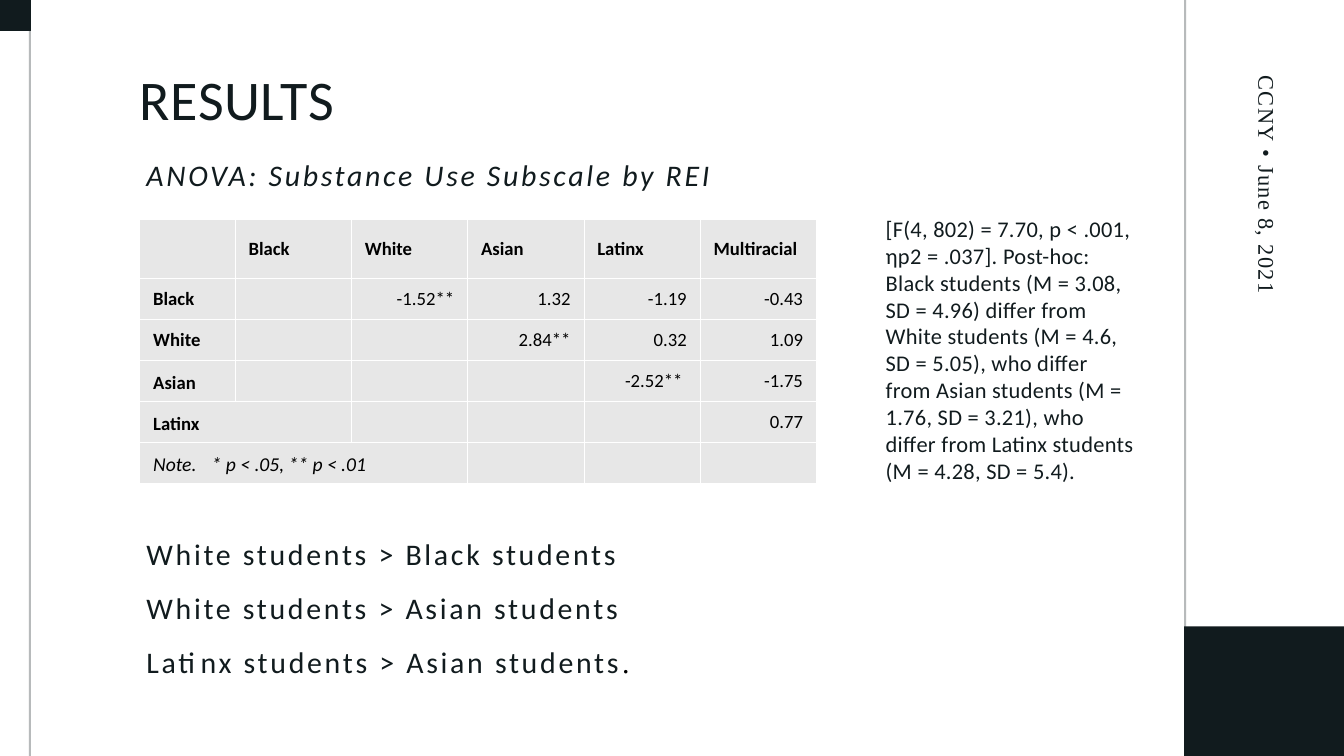
from lxml import etree
from pptx import Presentation
from pptx import util as u
from pptx.dml.color import RGBColor
from pptx.enum import shapes, text
from pptx.oxml.ns import qn

COLORS = {"ink": "111B1E", "cell": "E7E7E7", "black": "000000", "white": "FFFFFF"}
BODY, SERIF = "Calibri", "Times New Roman"
LEFT = 2.08
RULE_WIDTH = 0.03
ROW_LABELS = ["Black", "White", "Asian", "Latinx"]
COLUMN_LABELS = ["Black", "White", "Asian", "Latinx", "Multiracial"]
# Mean differences, each row starting just right of the diagonal
DIFFERENCES = [
    ["-1.52**", "1.32", "-1.19", "-0.43"],
    ["2.84**", "0.32", "1.09"],
    ["-2.52** ", "-1.75"],
    ["0.77"],
]
FINDINGS = [
    "White students > Black students",
    "White students > Asian students",
    "Latinx students > Asian students",
]
STATISTICS = (
    "[F(4, 802) = 7.70, p < .001, ηp2 = .037]. Post-hoc: Black students "
    "(M = 3.08, SD = 4.96) differ from White students (M = 4.6, SD = 5.05), "
    "who differ from Asian students (M = 1.76, SD = 3.21), who differ from "
    "Latinx students (M = 4.28, SD = 5.4)."
)


def color(name):
    return RGBColor.from_string(COLORS[name])


class ResultsSlide:
    """Holds the slide and its style, with one method per kind of element."""

    def __init__(self, presentation):
        self.slide = presentation.slides.add_slide(presentation.slide_layouts[5])

    def run(self, paragraph, words, size, font=BODY, ink="ink",
            bold=False, italic=False, spacing=0):
        run = paragraph.add_run()
        run.text = words
        run.font.size = u.Pt(size)
        run.font.name = font
        run.font.color.rgb = color(ink)
        run.font.bold = bold
        run.font.italic = italic
        if spacing:
            run.font._element.set("spc", str(round(spacing * 100)))

    def frame(self, shape, inset=True):
        frame = shape.text_frame
        frame.word_wrap = True
        frame.auto_size = text.MSO_AUTO_SIZE.NONE
        frame.vertical_anchor = text.MSO_ANCHOR.TOP
        horizontal, vertical = (0.1, 0.05) if inset else (0, 0)
        frame.margin_left = frame.margin_right = u.Inches(horizontal)
        frame.margin_top = frame.margin_bottom = u.Inches(vertical)
        return frame

    def title(self, words, left, top, width, height):
        title = self.slide.shapes.title
        title.left, title.top = u.Inches(left), u.Inches(top)
        title.width, title.height = u.Inches(width), u.Inches(height)
        paragraph = self.frame(title, inset=False).paragraphs[0]
        paragraph.alignment = text.PP_ALIGN.LEFT
        paragraph.line_spacing = u.Pt(77.4)
        self.run(paragraph, words, 60, spacing=0.6)

    def text_box(self, lines, left, top, width, height, size, inset=True,
                 line_spacing=None, rotation=0, **style):
        """Adds a box of one-run paragraphs and returns the last paragraph."""
        box = self.slide.shapes.add_textbox(
            u.Inches(left), u.Inches(top), u.Inches(width), u.Inches(height))
        box.rotation = rotation
        frame = self.frame(box, inset)
        for index, line in enumerate(lines):
            paragraph = frame.add_paragraph() if index else frame.paragraphs[0]
            paragraph.line_spacing = line_spacing
            self.run(paragraph, line, size, **style)
        return paragraph

    def bar(self, left, top, width, height, opacity=None):
        bar = self.slide.shapes.add_shape(
            shapes.MSO_SHAPE.RECTANGLE,
            u.Inches(left), u.Inches(top), u.Inches(width), u.Inches(height))
        bar.shadow.inherit = False
        bar.line.fill.background()
        bar.fill.solid()
        bar.fill.fore_color.rgb = color("ink")
        if opacity:
            tone = bar._element.spPr.find(qn("a:solidFill"))[0]
            etree.SubElement(tone, qn("a:alpha"), val=str(opacity * 1000))

    def table(self, left, top, widths, heights):
        table = self.slide.shapes.add_table(
            len(heights), len(widths), u.Inches(left), u.Inches(top),
            u.Inches(sum(widths)), u.Inches(sum(heights))).table
        table.first_row = table.horz_banding = False
        for column, width in zip(table.columns, widths):
            column.width = u.Inches(width)
        for row, height in zip(table.rows, heights):
            row.height = u.Inches(height)
        for cell in table.iter_cells():
            self.borders(cell)
            cell.fill.solid()
            cell.fill.fore_color.rgb = color("cell")
        return table

    def borders(self, cell):
        properties = cell._tc.get_or_add_tcPr()
        for side in ("a:lnL", "a:lnR", "a:lnT", "a:lnB"):
            line = etree.SubElement(properties, qn(side), w=str(u.Pt(1)))
            fill = etree.SubElement(line, qn("a:solidFill"))
            etree.SubElement(fill, qn("a:srgbClr"), val=COLORS["white"])

    def cell_text(self, cell, words, size=20, align=text.PP_ALIGN.LEFT,
                  anchor=text.MSO_ANCHOR.MIDDLE, **style):
        cell.margin_left = cell.margin_right = u.Inches(0.2)
        cell.margin_top = cell.margin_bottom = u.Inches(0.1)
        cell.vertical_anchor = anchor
        paragraph = cell.text_frame.paragraphs[0]
        paragraph.alignment = align
        self.run(paragraph, words, size, ink="black", **style)
        return paragraph


def add_differences(page):
    table = page.table(LEFT, 3.26, [1.42] + [1.73] * 5, [0.88] + [0.61] * 5)
    bottom = text.MSO_ANCHOR.BOTTOM
    table.cell(4, 0).merge(table.cell(4, 1))
    table.cell(5, 0).merge(table.cell(5, 2))
    for column, label in enumerate(COLUMN_LABELS, 1):
        page.cell_text(table.cell(0, column), label, bold=True)
    for row, (label, values) in enumerate(zip(ROW_LABELS, DIFFERENCES), 1):
        anchor = bottom if row > 2 else text.MSO_ANCHOR.MIDDLE
        page.cell_text(table.cell(row, 0), label, bold=True, anchor=anchor)
        for column, value in enumerate(values, row + 1):
            page.cell_text(table.cell(row, column), value,
                           align=text.PP_ALIGN.RIGHT)
    note = page.cell_text(table.cell(5, 0), "Note.\t* p < .05, ** p < .01", 21,
                          anchor=bottom, italic=True)
    tabs = etree.SubElement(note._p.get_or_add_pPr(), qn("a:tabLst"))
    etree.SubElement(tabs, qn("a:tab"), pos=str(u.Inches(0.87)), algn="l")


def main():
    presentation = Presentation()
    presentation.slide_width = u.Inches(20)
    presentation.slide_height = u.Inches(11.25)
    page = ResultsSlide(presentation)

    page.title("RESULTS", LEFT, 0.88, 12.98, 1.05)
    for left in (0.43, 17.62):
        page.bar(left, 0, RULE_WIDTH, 11.25, opacity=30)
    page.bar(0, 0, 0.46, 0.46)
    page.bar(17.62, 9.32, 2.38, 1.93)
    page.text_box(["CCNY • June 8, 2021"], 15.14, 4.66, 7.52, 0.45, 24,
                  inset=False, line_spacing=u.Pt(33.6), rotation=90,
                  font=SERIF, spacing=1.4)

    page.text_box(["ANOVA: Substance Use Subscale by REI"], LEFT, 2.2, 8.89, 0.69,
                  32, line_spacing=u.Pt(44.8), italic=True, spacing=2.9)
    page.text_box([STATISTICS], 13.18, 3.2, 3.71, 4.04, 24, inset=False,
                  spacing=0.3)
    add_differences(page)
    last = page.text_box(FINDINGS, LEFT, 7.66, 10, 2.44, 32,
                         line_spacing=1.5, spacing=2.9)
    page.run(last, ".", 32, font=SERIF, ink="black")

    presentation.save("out.pptx")


if __name__ == "__main__":
    main()
